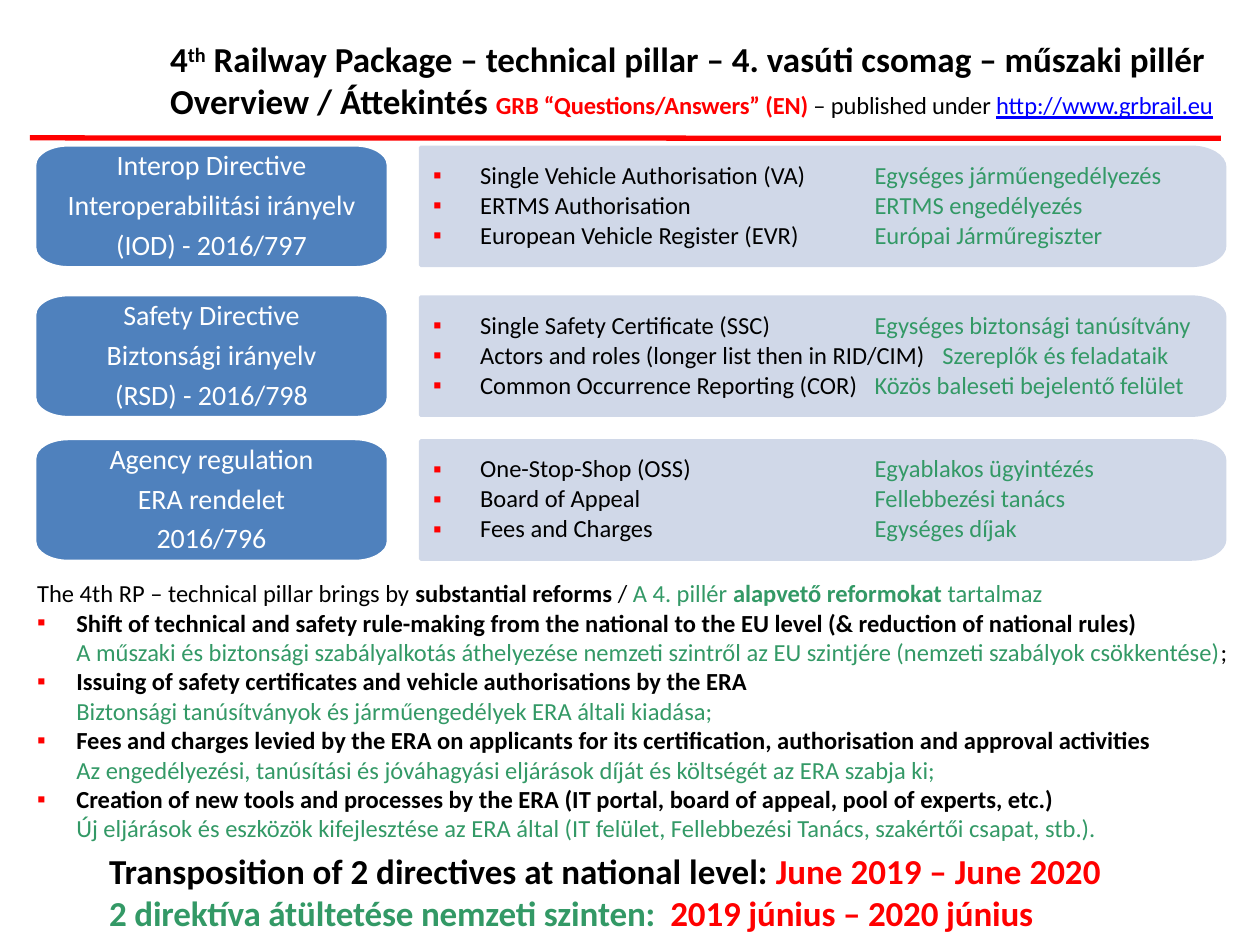
from dataclasses import dataclass

from lxml.etree import SubElement
from pptx import Presentation
from pptx.dml.color import RGBColor
from pptx.enum.shapes import MSO_CONNECTOR as Connector
from pptx.enum.text import MSO_ANCHOR as Anchor, PP_ALIGN as Align
from pptx.oxml.ns import qn
from pptx.util import Cm, Pt


@dataclass(frozen=True)
class Theme:
    font: str = "Calibri"
    black: str = "000000"
    white: str = "FFFFFF"
    red: str = "FF0000"
    green: str = "339966"
    link: str = "0000FF"
    label: str = "4F81BD"
    panel: str = "D0D8E8"
    heading: int = 20
    label_size: int = 16
    body: int = 14


THEME = Theme()

ACTS = [
    (2.92, ["Interop Directive", "Interoperabilitási irányelv", "(IOD) - 2016/797"],
     [("Single Vehicle Authorisation (VA)", "Egységes járműengedélyezés"),
      ("ERTMS Authorisation", "ERTMS engedélyezés"),
      ("European Vehicle Register (EVR)", "Európai Járműregiszter")]),
    (5.94, ["Safety Directive", "Biztonsági irányelv", "(RSD) - 2016/798"],
     [("Single Safety Certificate (SSC)", "Egységes biztonsági tanúsítvány"),
      ("Actors and roles (longer list then in RID/CIM)", "Szereplők és feladataik"),
      ("Common Occurrence Reporting (COR)", "Közös baleseti bejelentő felület")]),
    (8.84, ["Agency regulation", "ERA rendelet", "2016/796"],
     [("One-Stop-Shop (OSS)", "Egyablakos ügyintézés"),
      ("Board of Appeal", "Fellebbezési tanács"),
      ("Fees and Charges", "Egységes díjak")]),
]

REFORMS = [
    ("Shift of technical and safety rule-making from the national to the EU level "
     "(& reduction of national rules)",
     "A műszaki és biztonsági szabályalkotás áthelyezése nemzeti szintről az EU szintjére "
     "(nemzeti szabályok csökkentése)", ";"),
    ("Issuing of safety certificates and vehicle authorisations by the ERA",
     "Biztonsági tanúsítványok és járműengedélyek ERA általi kiadása;", ""),
    ("Fees and charges levied by the ERA on applicants for its certification, "
     "authorisation and approval activities",
     "Az engedélyezési, tanúsítási és jóváhagyási eljárások díját és költségét "
     "az ERA szabja ki;", ""),
    ("Creation of new tools and processes by the ERA (IT portal, board of appeal, "
     "pool of experts, etc.)",
     "Új eljárások és eszközök kifejlesztése az ERA által (IT felület, "
     "Fellebbezési Tanács, szakértői csapat, stb.).", ""),
]


def add_span(para, text, size, color=THEME.black, bold=False, tight=False):
    span = para.add_run()
    span.text = text
    font = span.font
    font.name, font.size, font.bold = THEME.font, Pt(size), bold
    font.color.rgb = RGBColor.from_string(color)
    if tight:
        font._element.set("spc", "-10")
    return span


def add_para(frame, first):
    return frame.paragraphs[0] if first else frame.add_paragraph()


def indent(para, left, bullet=True, tabs=()):
    props = para._p.get_or_add_pPr()
    props.set("marL", str(Cm(left)))
    props.set("indent", str(-Cm(left) if bullet else 0))
    if bullet:
        color = SubElement(props, qn("a:buClr"))
        SubElement(color, qn("a:srgbClr"), val=THEME.red)
        SubElement(props, qn("a:buFont"), typeface="Arial")
        SubElement(props, qn("a:buChar"), char="▪")
    if tabs:
        stops = SubElement(props, qn("a:tabLst"))
        for stop in tabs:
            SubElement(stops, qn("a:tab"), pos=str(Cm(stop)), algn="l")


def set_insets(frame, left, top, right, bottom):
    frame.margin_left, frame.margin_top = Cm(left), Cm(top)
    frame.margin_right, frame.margin_bottom = Cm(right), Cm(bottom)


def add_text_box(page, box):
    frame = page.shapes.add_textbox(*map(Cm, box)).text_frame
    frame.word_wrap = True
    return frame


def bend(line, start, corner, end):
    """Turn a straight path segment into a quarter of an ellipse."""
    line.tag = qn("a:cubicBezTo")
    for point in list(line):
        line.remove(point)
    controls = [tuple(p + 0.55 * (c - p) for p, c in zip(point, corner))
                for point in (start, end)]
    for x, y in (*controls, end):
        SubElement(line, qn("a:pt"), x=str(Cm(x)), y=str(Cm(y)))


def add_rounded(page, box, fill, line, round_left):
    """Box with elliptical corners on the right and, if asked, on the left."""
    left, top, width, height = box
    rx, ry = 0.68, 0.4
    points = [(width - rx, 0), (width, ry), (width, height - ry), (width - rx, height)]
    bends = {1: (width, 0), 3: (width, height)}
    if round_left:
        points += [(rx, height), (0, height - ry), (0, ry), (rx, 0)]
        bends |= {5: (0, height), 7: (0, 0)}
    else:
        points += [(0, height), (0, 0)]
    outline = [(Cm(left + x), Cm(top + y)) for x, y in points]
    builder = page.shapes.build_freeform(*outline[0], scale=1.0)
    builder.add_line_segments(outline[1:], close=True)
    shape = builder.convert_to_shape()
    segments = list(shape._element.spPr.iter(qn("a:lnTo")))
    for end, corner in bends.items():
        bend(segments[end - 1], points[end - 1], corner, points[end])
    shape.shadow.inherit = False
    shape.line.width = Pt(2)
    for paint, color in ((shape.fill, fill), (shape.line.fill, line)):
        paint.solid()
        paint.fore_color.rgb = RGBColor.from_string(color)
    frame = shape.text_frame
    frame.word_wrap = True
    frame.vertical_anchor = Anchor.MIDDLE
    return frame


def add_title(page, box):
    frame = add_text_box(page, box)
    frame.vertical_anchor = Anchor.BOTTOM
    para = frame.paragraphs[0]
    add_span(para, "4", THEME.heading, bold=True)
    ordinal = add_span(para, "th", THEME.heading, bold=True)
    ordinal.font._element.set("baseline", "30000")
    add_span(para, " Railway Package – technical pillar – 4. vasúti csomag – műszaki pillér",
             THEME.heading, bold=True)
    para = frame.add_paragraph()
    add_span(para, "Overview / Áttekintés ", THEME.heading, bold=True)
    add_span(para, "GRB “Questions/Answers” (EN)", THEME.body, THEME.red, True, tight=True)
    add_span(para, " – published under ", THEME.body, tight=True)
    link = add_span(para, "http://www.grbrail.eu", THEME.body, THEME.link, tight=True)
    link.font.underline = True


def add_rule(page, left, top, width):
    rule = page.shapes.add_connector(Connector.STRAIGHT, Cm(left), Cm(top),
                                     Cm(left + width), Cm(top + 0.01))
    rule.line.color.rgb = RGBColor.from_string(THEME.red)
    rule.line.width = Pt(3)
    SubElement(rule._element.spPr, qn("a:effectLst"))


def add_act(page, box, names, topics):
    left, top, width, height = box
    # Topics panel
    panel_left = 7.78
    panel = (left + panel_left, top + 0.05, width - panel_left, height - 0.1)
    frame = add_rounded(page, panel, THEME.panel, THEME.panel, False)
    set_insets(frame, 0.25, 0.3, 0.43, 0.3)
    for number, (english, hungarian) in enumerate(topics):
        para = add_para(frame, number == 0)
        indent(para, 0.95, tabs=(8.9, 10.27))
        para.alignment, para.line_spacing, para.space_after = Align.LEFT, 0.9, Pt(2)
        add_span(para, english + "\t", THEME.body)
        add_span(para, hungarian, THEME.body, THEME.green)
    # Name of the act
    frame = add_rounded(page, (left, top, 7.13, height), THEME.label, THEME.white, True)
    set_insets(frame, 0.56, 0.4, 0.56, 0.4)
    for number, name in enumerate(names):
        para = add_para(frame, number == 0)
        para.alignment, para.line_spacing, para.space_after = Align.CENTER, 0.9, Pt(5.5)
        add_span(para, name, THEME.label_size, THEME.white)


def add_reforms(page, box):
    frame = add_text_box(page, box)
    para = frame.paragraphs[0]
    for text, color, bold in [
        ("The 4th RP – technical pillar brings by ", THEME.black, False),
        ("substantial reforms", THEME.black, True),
        (" / ", THEME.black, False),
        ("A 4. pillér ", THEME.green, False),
        ("alapvető reformokat ", THEME.green, True),
        ("tartalmaz", THEME.green, False),
    ]:
        add_span(para, text, THEME.body, color, bold)
    for english, hungarian, ending in REFORMS:
        para = frame.add_paragraph()
        indent(para, 0.79)
        add_span(para, english, THEME.body, bold=True)
        para = frame.add_paragraph()
        indent(para, 0.79, bullet=False)
        add_span(para, hungarian, THEME.body, THEME.green)
        if ending:
            add_span(para, ending, THEME.body)


def add_deadlines(page, box):
    frame = add_text_box(page, box)
    set_insets(frame, 0, 0, 0, 0)
    for number, (text, color, dates, tight) in enumerate([
        ("Transposition of 2 directives at national level: ", THEME.black,
         "June 2019 – June 2020", False),
        ("2 direktíva átültetése nemzeti szinten:  ", THEME.green,
         "2019 június – 2020 június", True),
    ]):
        para = add_para(frame, number == 0)
        indent(para, 0.03, bullet=False)
        add_span(para, text, THEME.heading, color, True, tight)
        add_span(para, dates, THEME.heading, THEME.red, True, tight)


def main():
    deck = Presentation()
    deck.slide_width, deck.slide_height = Cm(25.4), Cm(19.05)
    page = deck.slides.add_slide(deck.slide_layouts[6])
    add_rule(page, 0.6, 2.78, 24.01)
    for top, names, topics in ACTS:
        add_act(page, (0.7, top, 23.99, 2.48), names, topics)
    add_title(page, (3.18, 0, 21.92, 2.58))
    add_reforms(page, (0.5, 11.53, 24.62, 5.64))
    add_deadlines(page, (2.17, 17.12, 23.2, 1.7))
    deck.save("out.pptx")


if __name__ == "__main__":
    main()
